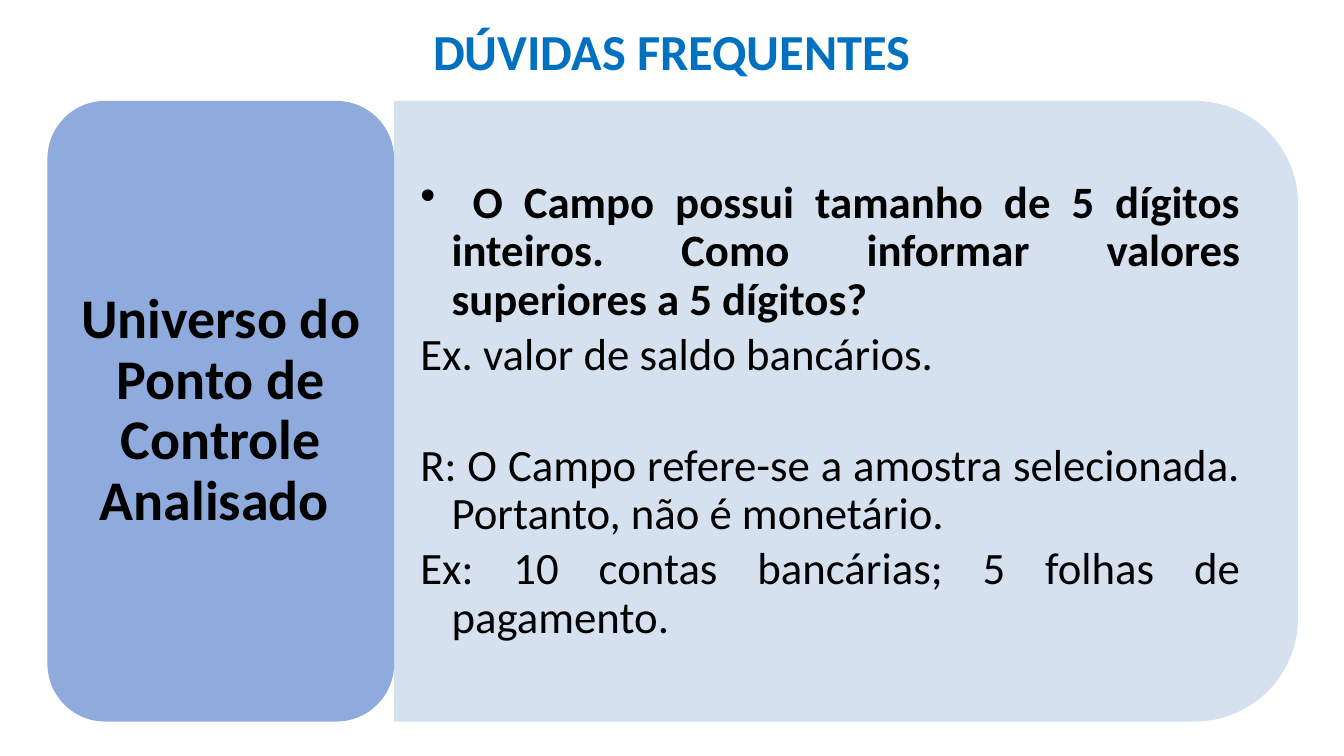
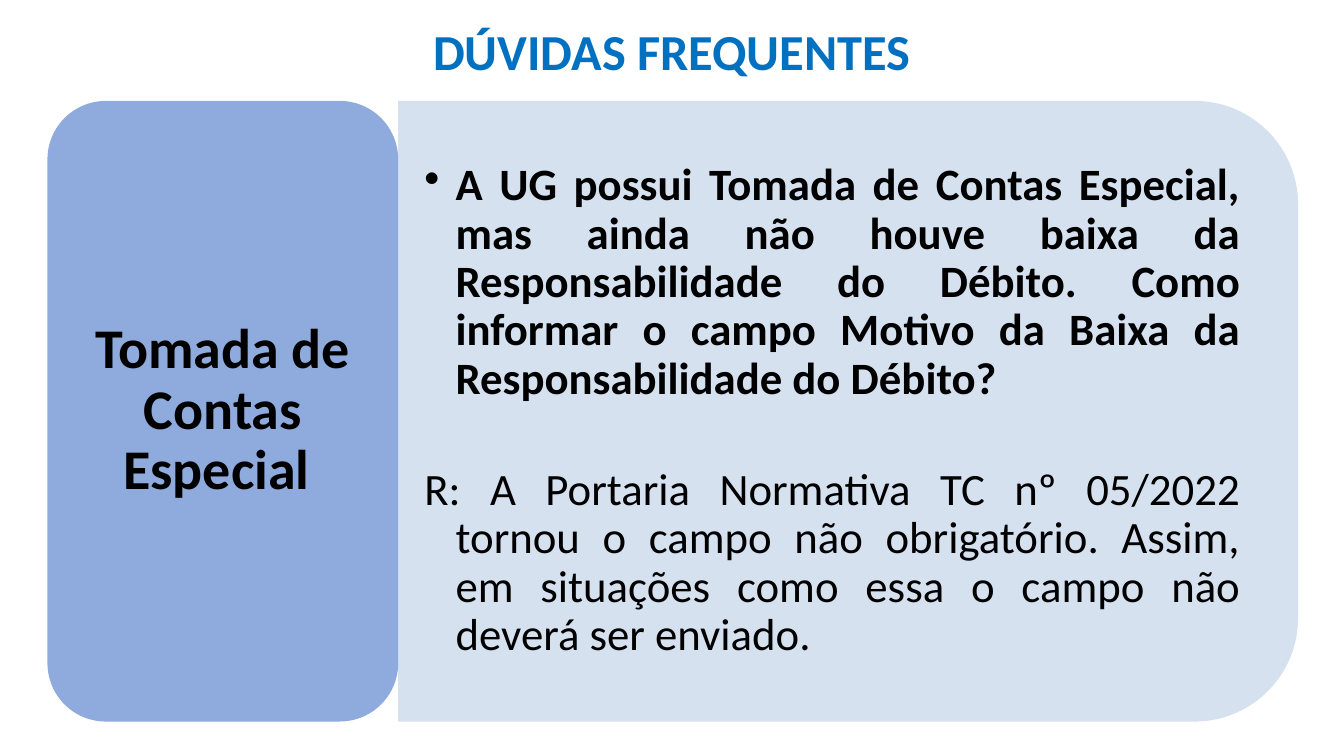
"""Build two frequently-asked-question slides, each with a topic card and an answer panel."""
from lxml.etree import SubElement
from pptx import Presentation
from pptx.dml.color import RGBColor
from pptx.enum.shapes import MSO_SHAPE
from pptx.enum.text import MSO_ANCHOR, MSO_AUTO_SIZE, PP_ALIGN
from pptx.oxml.ns import qn
from pptx.util import Inches, Pt

SLIDE_WIDTH, SLIDE_HEIGHT = Inches(13.333), Inches(7.5)
FONT = "Calibri"
TITLE_COLOR, CARD_COLOR, PANEL_COLOR, TEXT_COLOR = "0070C0", "8FAADC", "D2DEEF", "000000"
TITLE_TEXT = "DÚVIDAS FREQUENTES"
CONTENT_LEFT, CONTENT_RIGHT = 3.53, 96.58
CONTENT_TOP, CONTENT_HEIGHT = 13.35, 82.1
PANEL_MARGIN = 2.3
HANGING_INDENT = Inches(0.31)
ANSWER_GAP = 40

QUESTION = {"bold": True, "bullet": "•"}
ANSWER = {"space_before": ANSWER_GAP}
TOPICS = [
    ("Universo do Ponto de Controle Analisado ", 25.8, [
        (" O Campo possui tamanho de 5 dígitos inteiros. "
         "Como informar valores superiores a 5 dígitos?", QUESTION),
        ("Ex. valor de saldo bancários.", {}),
        ("R: O Campo refere-se a amostra selecionada. Portanto, não é monetário.", ANSWER),
        ("Ex: 10 contas bancárias; 5 folhas de pagamento.", {}),
    ]),
    ("Tomada de Contas Especial ", 26.1, [
        ("A UG possui Tomada de Contas Especial, mas ainda não houve baixa da "
         "Responsabilidade do Débito. Como informar o campo Motivo da Baixa da "
         "Responsabilidade do Débito?", QUESTION),
        ("R: A Portaria Normativa TC nº 05/2022 tornou o campo não obrigatório. "
         "Assim, em situações como essa o campo não deverá ser enviado.", ANSWER),
    ]),
]


def across(percent):
    """Return a share of the slide's width."""
    return round(SLIDE_WIDTH * percent / 100)


def down(percent):
    """Return a share of the slide's height."""
    return round(SLIDE_HEIGHT * percent / 100)


def color(hex_string):
    """Return the colour for a hex string."""
    return RGBColor.from_string(hex_string)


def write_text(paragraph, text, *, size, font_color=TEXT_COLOR, bold=False,
               align=PP_ALIGN.CENTER, line_spacing=0.9, space_before=0,
               space_after=0, indent=0, bullet=None):
    """Fill a paragraph with formatted text."""
    properties = paragraph._p.get_or_add_pPr()
    if indent:
        properties.set("marL", str(indent))
        properties.set("indent", str(-indent))
    if bullet:
        SubElement(properties, qn("a:buChar")).set("char", bullet)
    paragraph.alignment = align
    paragraph.line_spacing = line_spacing
    paragraph.space_before, paragraph.space_after = Pt(space_before), Pt(space_after)
    run = paragraph.add_run()
    run.text = text
    run.font.name, run.font.size, run.font.bold = FONT, Pt(size), bold
    run.font.color.rgb = color(font_color)


def set_frame(text_frame, anchor, horizontal, vertical):
    """Set wrapping, anchoring and insets of a text frame."""
    text_frame.word_wrap = True
    text_frame.auto_size = MSO_AUTO_SIZE.NONE
    text_frame.vertical_anchor = anchor
    text_frame.margin_left = text_frame.margin_right = Inches(horizontal)
    text_frame.margin_top = text_frame.margin_bottom = Inches(vertical)


def add_filled_shape(slide, kind, left, top, width, height, fill_color):
    """Add a borderless filled shape."""
    shape = slide.shapes.add_shape(kind, left, top, width, height)
    shape.shadow.inherit = False
    shape.fill.solid()
    shape.fill.fore_color.rgb = color(fill_color)
    shape.line.fill.background()
    return shape


def add_title(slide):
    """Place and format the title shared by the slides."""
    title = slide.shapes.title
    title.left, title.top = across(5.4), down(2)
    title.width, title.height = across(89.2), down(9.5)
    set_frame(title.text_frame, MSO_ANCHOR.TOP, 0.1, 0.05)
    write_text(title.text_frame.paragraphs[0], TITLE_TEXT, size=36,
               font_color=TITLE_COLOR, bold=True, line_spacing=1.0)


def add_panel(slide, left, entries):
    """Add the panel rounded on its right side, with its questions and answers."""
    top, height = down(CONTENT_TOP), down(CONTENT_HEIGHT)
    width = across(CONTENT_RIGHT - left)
    offset = (width - height) // 2
    panel = add_filled_shape(slide, MSO_SHAPE.ROUND_2_SAME_RECTANGLE,
                             across(left) + offset, top - offset, height, width, PANEL_COLOR)
    panel.rotation = 90
    fill = panel._element.spPr.find(qn("a:solidFill"))
    SubElement(fill[0], qn("a:alpha")).set("val", "90000")
    text_box = slide.shapes.add_textbox(across(left), top, width - across(PANEL_MARGIN), height)
    text_frame = text_box.text_frame
    set_frame(text_frame, MSO_ANCHOR.MIDDLE, 0.26, 0.14)
    for index, (text, style) in enumerate(entries):
        paragraph = text_frame.add_paragraph() if index else text_frame.paragraphs[0]
        write_text(paragraph, text, size=32, align=PP_ALIGN.JUSTIFY, space_after=4.8,
                   indent=HANGING_INDENT, **style)


def add_card(slide, topic, width):
    """Add the rounded card that names the topic."""
    card = add_filled_shape(slide, MSO_SHAPE.ROUNDED_RECTANGLE,
                            across(CONTENT_LEFT), down(CONTENT_TOP),
                            across(width), down(CONTENT_HEIGHT), CARD_COLOR)
    set_frame(card.text_frame, MSO_ANCHOR.MIDDLE, 0.16, 0.08)
    write_text(card.text_frame.paragraphs[0], topic, size=40, bold=True, space_after=14)


def main():
    """Build and save the presentation."""
    presentation = Presentation()
    presentation.slide_width, presentation.slide_height = SLIDE_WIDTH, SLIDE_HEIGHT
    for topic, card_width, entries in TOPICS:
        slide = presentation.slides.add_slide(presentation.slide_layouts[5])
        add_title(slide)
        add_panel(slide, CONTENT_LEFT + card_width, entries)
        add_card(slide, topic, card_width)
    presentation.save("out.pptx")


if __name__ == "__main__":
    main()
